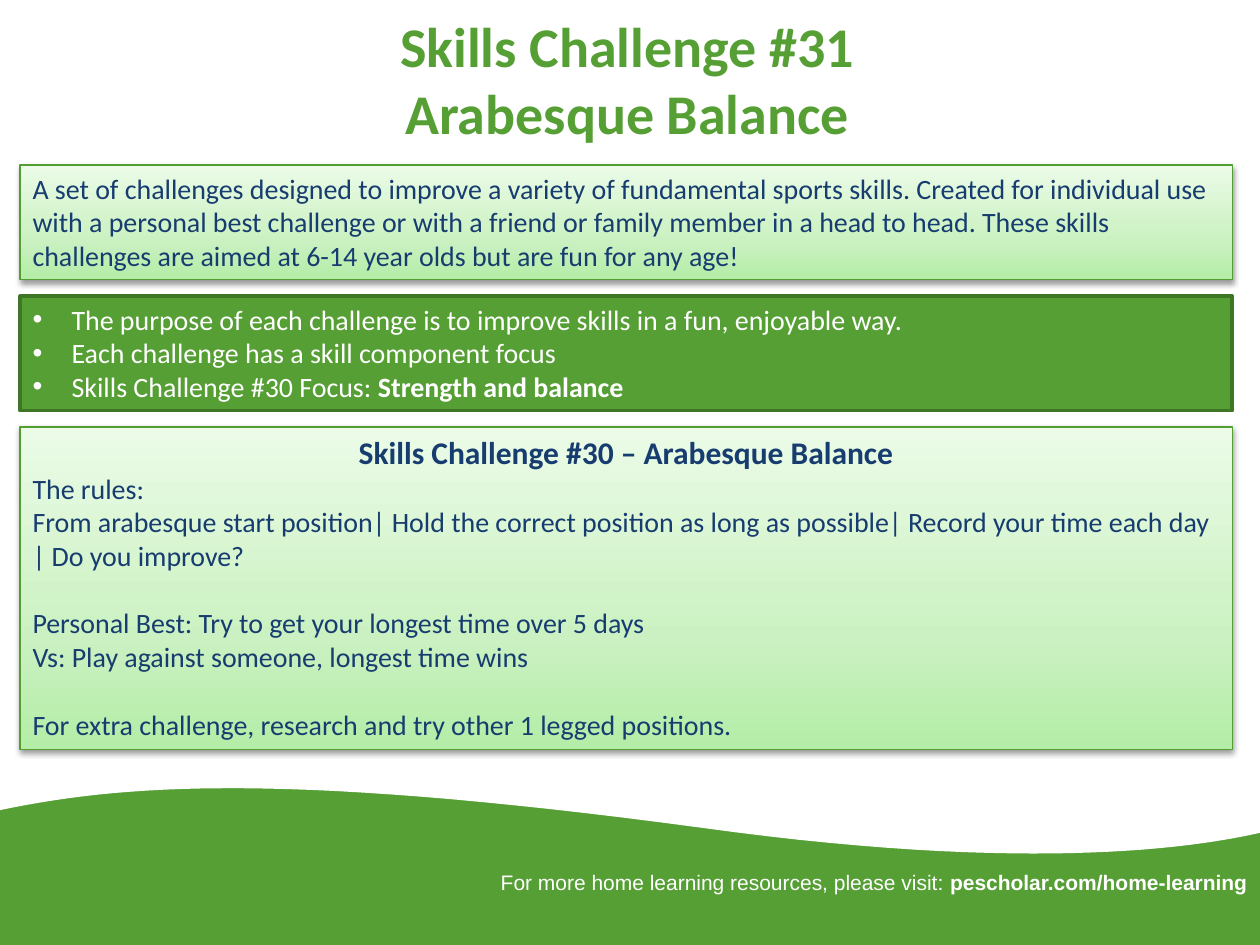
from lxml import etree
from pptx import Presentation, util as u
from pptx.dml.color import RGBColor
from pptx.enum import shapes, text
from pptx.oxml import parse_xml
from pptx.oxml.ns import nsdecls, qn

GREEN = RGBColor(0x55, 0x9F, 0x34)
DARK_GREEN = RGBColor(0x3F, 0x76, 0x26)
EDGE_GREEN = RGBColor(0x52, 0x9E, 0x30)
NAVY = RGBColor(0x17, 0x3C, 0x6F)
WHITE = RGBColor(0xFF, 0xFF, 0xFF)
GRADIENT = [(0, "B4EDA7"), (35, "CBF1C2"), (100, "EBFBE7")]

# Content: each paragraph is a list of (text, bold) runs plus its options
TITLE = ["Skills Challenge #31", "Arabesque Balance"]
INTRO = [([("A set of challenges designed to improve a variety of fundamental sports skills. "
            "Created for individual use with a personal best challenge or with a friend or family "
            "member in a head to head. These skills challenges are aimed at 6-14 year olds but "
            "are fun for any age!", False)], {})]
PURPOSE = [
    ([("The purpose of each challenge is to improve skills in a fun, enjoyable way.", False)],
     {"bullet": True}),
    ([("Each challenge has a skill component focus", False)], {"bullet": True}),
    ([("Skills Challenge #30 Focus: ", False), ("Strength and balance", True)],
     {"bullet": True}),
]
LINE_GAP = 19.5  # one line of body text, in points
RULES = [
    ([("Skills Challenge #30 – Arabesque Balance", True)],
     {"size": 18, "align": text.PP_ALIGN.CENTER}),
    ([("The rules:", False)], {}),
    ([("From arabesque start position| Hold the correct position as long as possible| "
       "Record your time each day | Do you improve?", False)], {}),
    ([("Personal Best: Try to get your longest time over 5 days", False)], {"before": LINE_GAP}),
    ([("Vs: Play against someone, longest time wins", False)], {}),
    ([("For extra challenge, research and try other 1 legged positions.", False)],
     {"before": LINE_GAP}),
]
FOOTER = [([("For more home learning resources, please visit: ", False),
            ("pescholar.com/home-learning", True)],
           {"size": 12, "font": "Arial", "align": text.PP_ALIGN.RIGHT})]

# Layout in inches: panels are stacked with one equal gap
WIDTH, HEIGHT = 10, 7.5
PANEL_LEFT, PANEL_WIDTH, PANEL_TOP, PANEL_GAP = 0.16, 9.62, 1.31, 0.13
PANELS = [(INTRO, 0.91, True), (PURPOSE, 0.91, False), (RULES, 2.56, True)]
BAND_TOP, WAVE_TOP = 6.21, 5.98
WAVE = [  # control points of two joined curves
    [(0, 6.43), (1, 6.22), (2.3, 6.13), (5.57, 6.57)],
    [(5.57, 6.57), (8.3, 6.95), (9.6, 6.7), (10, 6.61)],
]
CURVE_STEPS = 30


def style_run(span, size, color, bold, font="Calibri"):
    span.font.name, span.font.size = font, u.Pt(size)
    span.font.bold, span.font.color.rgb = bold, color


def write(frame, content, color):
    frame.word_wrap = True
    frame.vertical_anchor = text.MSO_ANCHOR.TOP
    for i, (runs, options) in enumerate(content):
        para = frame.paragraphs[0] if i == 0 else frame.add_paragraph()
        para.alignment = options.get("align", text.PP_ALIGN.LEFT)
        if "before" in options:
            para.space_before = u.Pt(options["before"])
        if options.get("bullet"):
            props = para._p.get_or_add_pPr()
            indent = u.Inches(0.31)
            props.set("marL", str(indent))
            props.set("indent", str(-indent))
            etree.SubElement(props, qn("a:buFont")).set("typeface", "Arial")
            etree.SubElement(props, qn("a:buChar")).set("char", "•")
        for words, bold in runs:
            span = para.add_run()
            span.text = words
            style_run(span, options.get("size", 16), color, bold, options.get("font", "Calibri"))


def paint(shape, fill, line=None, weight=0):
    shape.shadow.inherit = False
    shape.fill.solid()
    shape.fill.fore_color.rgb = fill
    if line is None:
        shape.line.fill.background()
    else:
        shape.line.color.rgb, shape.line.width = line, u.Pt(weight)


def add_gradient_and_shadow(shape):
    props = shape._element.spPr
    stops = "".join(f'<a:gs pos="{pos * 1000}"><a:srgbClr val="{color}"/></a:gs>'
                    for pos, color in GRADIENT)
    gradient = parse_xml(f'<a:gradFill {nsdecls("a")} rotWithShape="1"><a:gsLst>{stops}</a:gsLst>'
                         '<a:lin ang="16200000" scaled="0"/></a:gradFill>')
    props.replace(props.find(qn("a:solidFill")), gradient)
    shadow = parse_xml(
        f'<a:effectLst {nsdecls("a")}><a:outerShdw blurRad="{u.Pt(3.1)}" dist="{u.Pt(1.6)}" '
        'dir="5400000" rotWithShape="0"><a:srgbClr val="000000"><a:alpha val="38000"/>'
        '</a:srgbClr></a:outerShdw></a:effectLst>')
    props.replace(props.find(qn("a:effectLst")), shadow)


def add_rectangle(page, left, top, width, height):
    return page.shapes.add_shape(shapes.MSO_SHAPE.RECTANGLE, u.Inches(left), u.Inches(top),
                                 u.Inches(width), u.Inches(height))


def bezier(points, t):
    weights = ((1 - t) ** 3, 3 * t * (1 - t) ** 2, 3 * t * t * (1 - t), t ** 3)
    return tuple(u.Inches(sum(w * p[axis] for w, p in zip(weights, points))) for axis in (0, 1))


def main():
    deck = Presentation()
    deck.slide_width, deck.slide_height = u.Inches(WIDTH), u.Inches(HEIGHT)
    page = deck.slides.add_slide(deck.slide_layouts[5])

    # Green footer band, cut by a white wave
    paint(add_rectangle(page, 0, BAND_TOP, WIDTH, HEIGHT - BAND_TOP), GREEN)
    edge = [bezier(curve, step / CURVE_STEPS) for curve in WAVE
            for step in range(CURVE_STEPS + 1)]
    builder = page.shapes.build_freeform(0, u.Inches(WAVE_TOP))
    builder.add_line_segments(edge + [(u.Inches(WIDTH), u.Inches(WAVE_TOP))], close=True)
    paint(builder.convert_to_shape(), WHITE)

    # Title
    title = page.shapes.title
    title.left, title.top = u.Inches(0.48), 0
    title.width, title.height = u.Inches(9), u.Inches(1.25)
    title.text_frame.vertical_anchor = text.MSO_ANCHOR.MIDDLE
    para = title.text_frame.paragraphs[0]
    para.alignment = text.PP_ALIGN.CENTER
    for i, words in enumerate(TITLE):
        if i:
            para.add_line_break()
        span = para.add_run()
        span.text = words
        style_run(span, 32, GREEN, True)

    # Stacked panels
    top = PANEL_TOP
    for content, height, light in PANELS:
        panel = add_rectangle(page, PANEL_LEFT, top, PANEL_WIDTH, height)
        if light:
            paint(panel, WHITE, EDGE_GREEN, 0.75)
            add_gradient_and_shadow(panel)
        else:
            paint(panel, GREEN, DARK_GREEN, 2)
        write(panel.text_frame, content, NAVY if light else WHITE)
        top += height + PANEL_GAP

    # Footer text
    footer = page.shapes.add_textbox(u.Inches(3.39), u.Inches(6.85), u.Inches(6.61), u.Inches(0.3))
    write(footer.text_frame, FOOTER, WHITE)

    deck.save("out.pptx")


if __name__ == "__main__":
    main()
